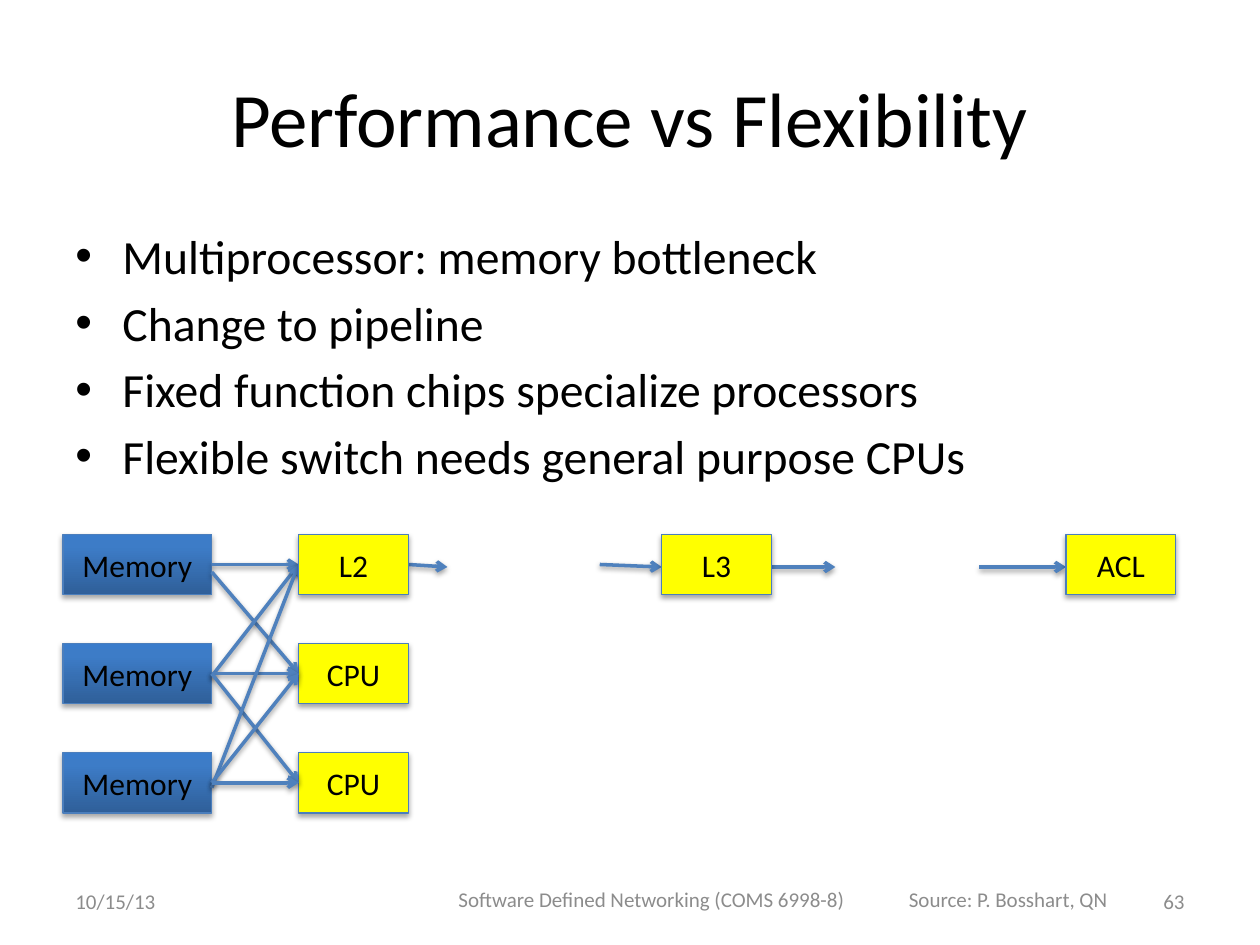
from copy import deepcopy
from dataclasses import dataclass

from lxml import etree
from pptx import Presentation
from pptx import util as u
from pptx.dml.color import RGBColor
from pptx.enum import shapes, text
from pptx.oxml.ns import qn

LEFT, CENTER, RIGHT = text.PP_ALIGN.LEFT, text.PP_ALIGN.CENTER, text.PP_ALIGN.RIGHT


@dataclass(frozen=True)
class Theme:
    font: str = "Calibri"
    ink: str = "000000"
    muted: str = "8C8C8C"
    stage: str = "FFFF00"
    memory: tuple = ((0, "2F5F99"), (0.8, "3D7CC7"), (1, "3A7CCB"))
    outline: str = "4B7EBC"
    arrow: str = "4F81BD"
    title_size: float = 44
    body_size: float = 27.2
    label_size: float = 18
    footer_size: float = 12


def write(frame, lines, *, font, size, color, align=LEFT,
          anchor=text.MSO_ANCHOR.MIDDLE, before=0):
    """Fill a text frame with one paragraph per line."""
    frame.word_wrap = True
    frame.vertical_anchor = anchor
    for number, line in enumerate(lines):
        paragraph = frame.paragraphs[0] if number == 0 else frame.add_paragraph()
        paragraph.alignment = align
        paragraph.space_before = u.Pt(before)
        run = paragraph.add_run()
        run.text = line
        run.font.name = font
        run.font.size = u.Pt(size)
        run.font.color.rgb = RGBColor.from_string(color)


def add_shadow(element, opacity, distance):
    """Give a shape or connector a soft shadow straight below it."""
    properties = element.spPr
    effects = properties.find(qn("a:effectLst"))
    if effects is None:
        effects = etree.SubElement(properties, qn("a:effectLst"))
    shadow = etree.SubElement(effects, qn("a:outerShdw"), blurRad=str(u.Pt(3.1)),
                              dist=str(u.Pt(distance)), dir="5400000", rotWithShape="0")
    color = etree.SubElement(shadow, qn("a:srgbClr"), val="000000")
    etree.SubElement(color, qn("a:alpha"), val=str(opacity * 1000))


class Deck:
    def __init__(self, theme):
        self.theme = theme
        self.file = Presentation()
        self.file.slide_width, self.file.slide_height = u.Cm(25.4), u.Cm(19.05)
        self.slide = self.file.slides.add_slide(self.file.slide_layouts[5])

    def title(self, words, left, top, width, height):
        title = self.slide.shapes.title
        title.left, title.top = u.Cm(left), u.Cm(top)
        title.width, title.height = u.Cm(width), u.Cm(height)
        write(title.text_frame, [words], font=self.theme.font, align=CENTER,
              size=self.theme.title_size, color=self.theme.ink)

    def textbox(self, lines, left, top, width, height, **style):
        area = self.slide.shapes.add_textbox(u.Cm(left), u.Cm(top), u.Cm(width), u.Cm(height))
        write(area.text_frame, lines, font=self.theme.font, **style)
        return area.text_frame

    def bullets(self, lines, *place):
        frame = self.textbox(lines, *place, size=self.theme.body_size, before=5.4,
                             color=self.theme.ink, anchor=text.MSO_ANCHOR.TOP)
        indent = u.Cm(0.95)
        for paragraph in frame.paragraphs:
            properties = paragraph._p.get_or_add_pPr()
            properties.set("marL", str(indent))
            properties.set("indent", str(-indent))
            etree.SubElement(properties, qn("a:buFont"), typeface="Arial")
            etree.SubElement(properties, qn("a:buChar"), char="•")

    def footer(self, words, left, top, width, height, align):
        self.textbox([words], left, top, width, height, align=align,
                     size=self.theme.footer_size, color=self.theme.muted)

    def box(self, label, left, top, width, height, fill):
        box = self.slide.shapes.add_shape(shapes.MSO_SHAPE.RECTANGLE, u.Cm(left), u.Cm(top),
                                          u.Cm(width), u.Cm(height))
        if isinstance(fill, str):
            box.fill.solid()
            box.fill.fore_color.rgb = RGBColor.from_string(fill)
        else:
            box.fill.gradient()
            box.fill.gradient_angle = 90
            stop_list = box._element.spPr.find(".//" + qn("a:gsLst"))
            stop_list.append(deepcopy(stop_list[-1]))
            for stop, (position, color) in zip(box.fill.gradient_stops, fill):
                stop.position = position
                stop.color.rgb = RGBColor.from_string(color)
        box.line.color.rgb = RGBColor.from_string(self.theme.outline)
        box.line.width = u.Pt(0.75)
        box.shadow.inherit = False
        add_shadow(box._element, 35, 1.8)
        write(box.text_frame, [label], font=self.theme.font, align=CENTER,
              size=self.theme.label_size, color=self.theme.ink)

    def arrow(self, x1, y1, x2, y2):
        arrow = self.slide.shapes.add_connector(shapes.MSO_CONNECTOR.STRAIGHT, u.Cm(x1),
                                                u.Cm(y1), u.Cm(x2), u.Cm(y2))
        arrow.line.color.rgb = RGBColor.from_string(self.theme.arrow)
        arrow.line.width = u.Pt(2)
        etree.SubElement(arrow.line._get_or_add_ln(), qn("a:tailEnd"), type="arrow")
        add_shadow(arrow._element, 38, 1.6)


def main():
    theme = Theme()
    deck = Deck(theme)

    # Title and bullet list
    deck.title("Performance vs Flexibility", 1.27, 0.76, 22.86, 3.18)
    deck.bullets(["Multiprocessor: memory bottleneck",
                  "Change to pipeline",
                  "Fixed function chips specialize processors",
                  "Flexible switch needs general purpose CPUs"], 1.27, 4.45, 22.86, 4.95)

    # Memory and processor columns
    height = 1.22
    memory_left, memory_width = 1.27, 3
    stage_left, stage_width = 6.02, 2.21
    rows = [10.77 + 2.2 * row for row in range(3)]
    for top in rows:
        deck.box("Memory", memory_left, top, memory_width, height, theme.memory)
    for top in rows[1:]:
        deck.box("CPU", stage_left, top, stage_width, height, theme.stage)

    # Crossbar: (memory row, processor row) and the drop of the arrow's start
    middles = [top + height / 2 for top in rows]
    crossbar = {(0, 0): 0, (0, 1): 0.15, (1, 0): 0.05, (1, 1): 0,
                (1, 2): 0, (2, 0): 0.1, (2, 1): 0, (2, 2): 0}
    for (source, target), drop in crossbar.items():
        deck.arrow(memory_left + memory_width, middles[source] + drop,
                   stage_left, middles[target])

    # Pipeline: arrows leave and reach the stages, with gaps between
    level = 11.43
    for start, end, rise in [(8.23, 9.02, 0.05), (12.09, 13.34, 0.05),
                             (15.57, 16.84, 0), (19.74, 21.49, 0)]:
        deck.arrow(start, level - rise, end, level)
    for stage, left in [("L2", stage_left), ("L3", 13.34), ("ACL", 21.49)]:
        deck.box(stage, left, rows[0], stage_width, height, theme.stage)

    # Footer, with the source's employer given as an invented short name
    deck.footer("63", 18.21, 17.65, 5.92, 1.02, RIGHT)
    deck.footer("10/15/13", 1.27, 17.65, 5.92, 1.02, LEFT)
    deck.footer("Software Defined Networking (COMS 6998-8)", 8.69, 17.58, 8.89, 1.09, CENTER)
    deck.footer("Source: P. Bosshart, QN", 15.88, 17.58, 8.89, 1.09, CENTER)

    deck.file.save("out.pptx")


if __name__ == "__main__":
    main()
